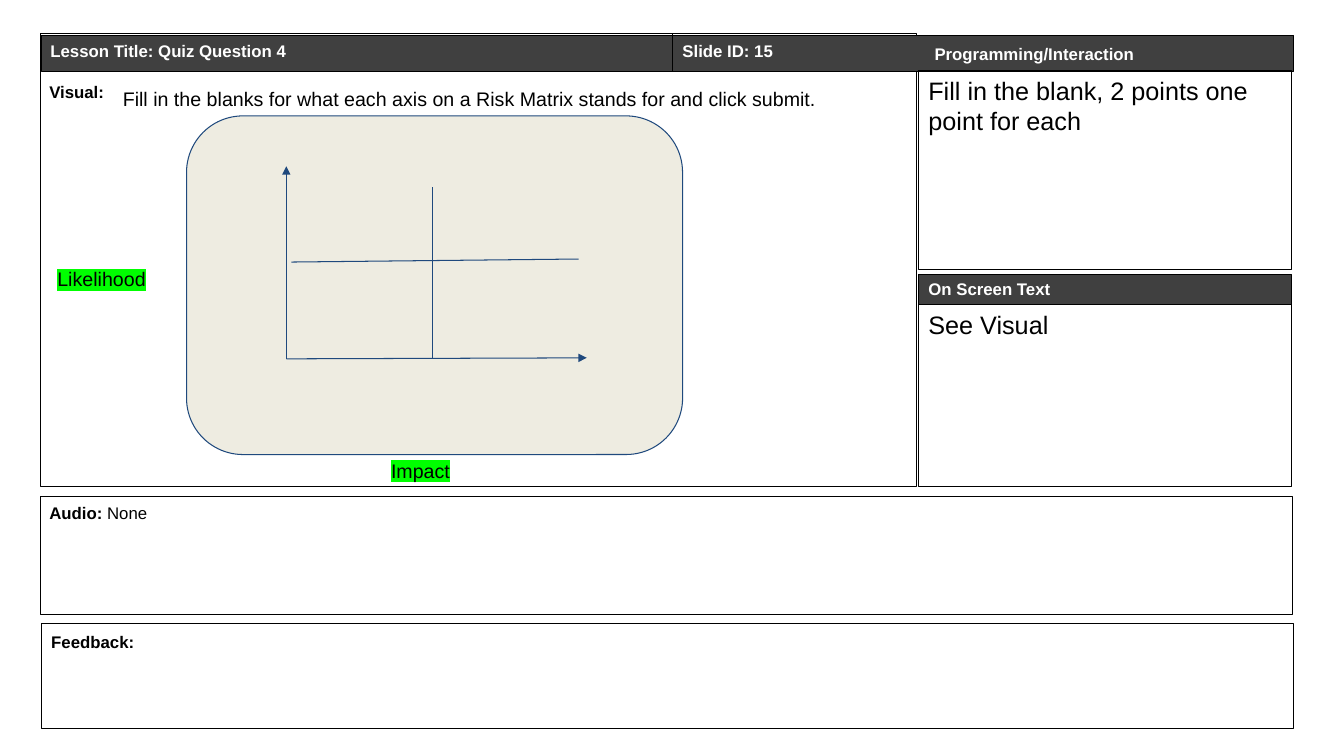
from lxml.etree import SubElement
from pptx import Presentation
from pptx.dml.color import RGBColor
from pptx.enum.shapes import MSO_CONNECTOR, MSO_SHAPE
from pptx.enum.text import MSO_ANCHOR, MSO_AUTO_SIZE, PP_ALIGN
from pptx.oxml.ns import qn
from pptx.util import Inches, Pt

BLACK, WHITE, CHARCOAL = "000000", "FFFFFF", "404040"
NAVY, CREAM, GREEN = "1F497D", "EEECE1", "00FF00"


def paint(color_format, color):
    color_format.rgb = RGBColor.from_string(color)


def add_panel(page, left, top, width, height, fill=None, line=BLACK, kind=MSO_SHAPE.RECTANGLE):
    panel = page.shapes.add_shape(kind, Inches(left), Inches(top), Inches(width), Inches(height))
    panel.shadow.inherit = False
    if fill:
        panel.fill.solid()
        paint(panel.fill.fore_color, fill)
    else:
        panel.fill.background()
    paint(panel.line.color, line)
    panel.line.width = Pt(0.75)
    return panel


def add_line(page, start, end, color, arrow=False):
    points = [Inches(value) for value in (*start, *end)]
    line = page.shapes.add_connector(MSO_CONNECTOR.STRAIGHT, *points)
    paint(line.line.color, color)
    line.line.width = Pt(0.75)
    if arrow:
        SubElement(line.line._get_or_add_ln(), qn("a:tailEnd"), type="triangle")
    SubElement(line._element.spPr, qn("a:effectLst"))


def write(shape, text, size=12, color=BLACK, bold=False, inset=0.05, anchor=MSO_ANCHOR.TOP):
    frame = shape.text_frame
    frame.word_wrap = True
    frame.auto_size = MSO_AUTO_SIZE.NONE
    frame.vertical_anchor = anchor
    frame.margin_left = frame.margin_right = Inches(0.1)
    frame.margin_top = frame.margin_bottom = Inches(inset)
    frame.text = text
    para = frame.paragraphs[0]
    para.alignment = PP_ALIGN.LEFT
    span = para.runs[0]
    style(span, size, color, bold)
    return para


def style(span, size, color, bold):
    span.font.name = "Arial"
    span.font.size = Pt(size)
    span.font.bold = bold
    paint(span.font.color, color)


def highlight(span, color):
    properties = span.font._element
    mark = SubElement(properties, qn("a:highlight"))
    SubElement(mark, qn("a:srgbClr"), val=color)
    properties.find(qn("a:latin")).addprevious(mark)


def add_text(page, left, top, width, height, text, **look):
    box = page.shapes.add_textbox(Inches(left), Inches(top), Inches(width), Inches(height))
    return write(box, text, **look)


def add_header(page, left, top, width, height):
    add_panel(page, left, top, width, height, CHARCOAL)
    divider = left + 6.26
    add_line(page, (divider, top + 0.35), (divider, top - 0.02), BLACK)
    title = page.shapes.title
    title.left, title.top = Inches(left - 0.01), Inches(top)
    title.width, title.height = Inches(6.19), Inches(0.3)
    write(title, "Lesson Title: Quiz Question 4", color=WHITE, bold=True)
    title.element.getparent().append(title.element)
    add_text(page, divider, top + 0.01, 2.39, 0.3, "Slide ID: 15", color=WHITE, bold=True)
    add_text(page, left + 8.76, top + 0.06, 2.25, 0.25, "Programming/Interaction",
             color=WHITE, bold=True, anchor=MSO_ANCHOR.MIDDLE)


def add_risk_matrix(page, left, top, width, height):
    add_panel(page, left, top, width, height, CREAM, NAVY, MSO_SHAPE.ROUNDED_RECTANGLE)
    lines = [
        ((0.99, 2.41), (3.97, 2.4), True),
        ((0.99, 2.41), (0.99, 0.5), True),
        ((2.44, 2.4), (2.44, 0.71), False),
        ((1.04, 1.45), (3.89, 1.42), False),
    ]
    for (x1, y1), (x2, y2), arrow in lines:
        add_line(page, (left + x1, top + y1), (left + x2, top + y2), NAVY, arrow)


def add_visual(page, left, top):
    add_text(page, left - 0.01, top + 0.43, 1.19, 0.3, "Visual:", bold=True)
    add_risk_matrix(page, left + 1.45, top + 0.82, 4.92, 3.36)
    for x, y, answer in [(0.07, 2.22, "Likelihood"), (3.38, 4.12, "Impact")]:
        para = add_text(page, left + x, top + y, 1.19, 0.44, answer, size=14, inset=0.1)
        highlight(para.runs[0], GREEN)
    add_text(page, left + 0.72, top + 0.43, 9, 0.44,
             "Fill in the blanks for what each axis on a Risk Matrix stands for and click submit.",
             size=14, inset=0.1)


def add_sidebar(page, left, top, width):
    write(add_panel(page, left, top, width, 1.97),
          "Fill in the blank, 2 points one point for each", size=18)
    write(add_panel(page, left, top + 2.32, width, 1.81), "See Visual", size=18)
    write(add_panel(page, left, top + 2.02, width, 0.3, CHARCOAL), "On Screen Text",
          color=WHITE, bold=True, anchor=MSO_ANCHOR.MIDDLE)


def add_note_panel(page, left, top, width, height, text_left, text_top, label, content=""):
    add_panel(page, left, top, width, height, WHITE)
    para = add_text(page, text_left, text_top, width - 0.04, height - 0.03, label, bold=True)
    if content:
        span = para.add_run()
        span.text = content
        style(span, 12, BLACK, False)


def main():
    deck = Presentation()
    deck.slide_width, deck.slide_height = Inches(13.33), Inches(7.5)
    page = deck.slides.add_slide(deck.slide_layouts[5])
    add_panel(page, 0.4, 0.33, 8.69, 4.5, WHITE)
    add_header(page, 0.41, 0.35, 12.42, 0.36)
    add_sidebar(page, 9.11, 0.7, 3.7)
    add_note_panel(page, 0.4, 4.93, 12.42, 1.17, 0.39, 4.94, "Audio: ", "None")
    add_note_panel(page, 0.41, 6.19, 12.42, 1.04, 0.41, 6.22, "Feedback:")
    add_visual(page, 0.4, 0.33)
    deck.save("out.pptx")


if __name__ == "__main__":
    main()
